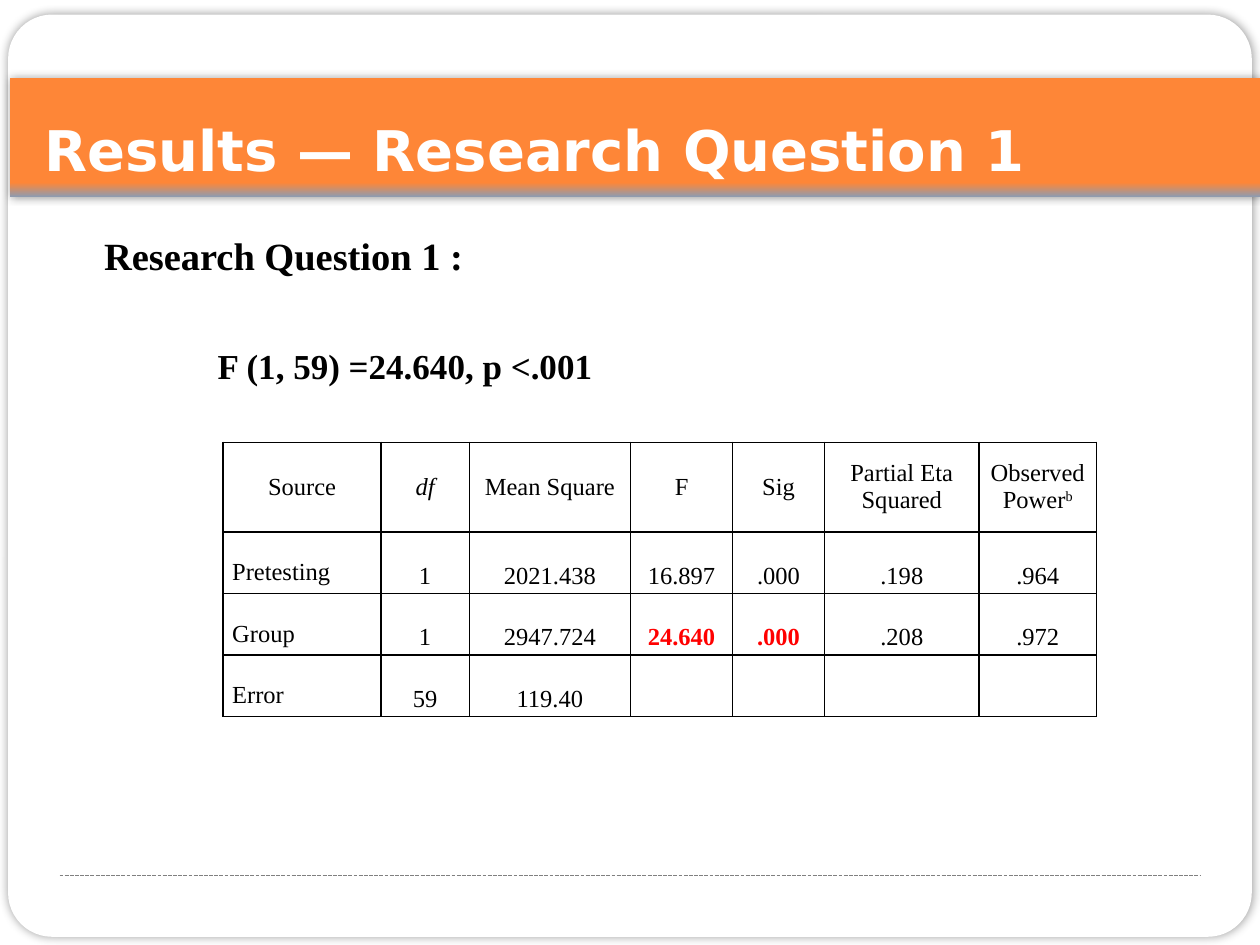
import pptx
import pptx.dml.color
import pptx.enum.dml
import pptx.enum.shapes
import pptx.enum.text
import pptx.oxml
import pptx.oxml.ns
import pptx.util

Cm = pptx.util.Cm
Pt = pptx.util.Pt
RGBColor = pptx.dml.color.RGBColor
SHAPE = pptx.enum.shapes.MSO_SHAPE
ANCHOR = pptx.enum.text.MSO_ANCHOR
ALIGN = pptx.enum.text.PP_ALIGN

WHITE = RGBColor(0xFF, 0xFF, 0xFF)
BLACK = RGBColor(0, 0, 0)
RED = RGBColor(0xFF, 0, 0)
GRAY = RGBColor(0x80, 0x80, 0x80)
ORANGE = RGBColor(0xFE, 0x86, 0x37)
STEEL = RGBColor(0x8E, 0x9B, 0xB0)

SERIF = "Times New Roman"
SANS = "DejaVu Sans"
NAMESPACE = pptx.oxml.ns.nsdecls("a")

COLUMN_WIDTHS = [3.18, 1.78, 3.25, 2.06, 1.85, 3.12, 2.36]
ROW_HEIGHTS = [1.8, 1.24, 1.24, 1.24]
ROWS = [
    ["Source", "df", "Mean Square", "F", "Sig", "Partial Eta Squared", "Observed\nPower"],
    ["Pretesting", "1", "2021.438", "16.897", ".000", ".198", ".964"],
    ["Group", "1", "2947.724", "24.640", ".000", ".208", ".972"],
    ["Error", "59", "119.40", "", "", "", ""],
]
SIGNIFICANT_CELLS = {(2, 3), (2, 4)}


def set_font(paragraph, name, size, color, bold=False):
    font = paragraph.font
    font.name = name
    font.size = Pt(size)
    font.bold = bold
    font.color.rgb = color


def add_glow(shape):
    shape._element.spPr.append(pptx.oxml.parse_xml(
        f'<a:effectLst {NAMESPACE}><a:outerShdw blurRad="{Pt(5)}" dist="0" dir="0">'
        '<a:srgbClr val="000000"><a:alpha val="40000"/></a:srgbClr>'
        '</a:outerShdw></a:effectLst>'))


def add_frame(slide, left, top, width, height):
    card = slide.shapes.add_shape(
        SHAPE.ROUNDED_RECTANGLE, Cm(left), Cm(top), Cm(width), Cm(height))
    card.adjustments[0] = 0.046
    card.fill.solid()
    card.fill.fore_color.rgb = WHITE
    card.line.color.rgb = WHITE
    card.line.width = Pt(2)
    add_glow(card)

    rule_top = Cm(top + 17.32)
    rule = slide.shapes.add_connector(
        pptx.enum.shapes.MSO_CONNECTOR.STRAIGHT,
        Cm(left + 1), rule_top, Cm(left + width - 1), rule_top)
    rule.line.color.rgb = GRAY
    rule.line.width = Pt(0.75)
    rule.line.dash_style = pptx.enum.dml.MSO_LINE.SQUARE_DOT
    rule._element.spPr.append(pptx.oxml.parse_xml(f"<a:effectLst {NAMESPACE}/>"))


def add_title_band(slide, left, top, width, height):
    band = slide.shapes.add_shape(
        SHAPE.RECTANGLE, Cm(left), Cm(top), Cm(width), Cm(height))
    band.fill.gradient()
    band.fill.gradient_angle = 270
    for stop, color, position in zip(
            band.fill.gradient_stops, (ORANGE, STEEL), (0.88, 1)):
        stop.color.rgb = color
        stop.position = position
    band.line.fill.background()
    add_glow(band)

    title = slide.shapes.add_textbox(
        Cm(left + 0.44), Cm(top + 0.62), Cm(21), Cm(1.5))
    title.text_frame.word_wrap = True
    paragraph = title.text_frame.paragraphs[0]
    paragraph.text = "Results — Research Question 1"
    set_font(paragraph, SANS, 32, WHITE, bold=True)


def add_finding(slide, left, top, width, height):
    body = slide.shapes.add_textbox(Cm(left), Cm(top), Cm(width), Cm(height))
    frame = body.text_frame
    frame.word_wrap = True
    frame.margin_top = Cm(1.56)
    question = frame.paragraphs[0]
    result = frame.add_paragraph()
    result.space_before = Pt(38)
    for paragraph, text, size, indent in (
            (question, "Research Question 1 :", 22, 0.58),
            (result, "F (1, 59) =24.640, p <.001", 20, 2.87)):
        paragraph.text = text
        paragraph._p.get_or_add_pPr().set("marL", str(Cm(indent)))
        set_font(paragraph, SERIF, size, BLACK, bold=True)


def style_cell(cell):
    properties = cell._tc.get_or_add_tcPr()
    for side in ("lnL", "lnR", "lnT", "lnB"):
        properties.append(pptx.oxml.parse_xml(
            f'<a:{side} {NAMESPACE} w="{Pt(1)}"><a:solidFill>'
            f'<a:srgbClr val="{BLACK}"/></a:solidFill></a:{side}>'))
    cell.fill.background()
    cell.margin_left = cell.margin_right = Cm(0.18)
    cell.margin_top = cell.margin_bottom = 0


def add_results_table(slide, left, top):
    table = slide.shapes.add_table(
        len(ROWS), len(COLUMN_WIDTHS), Cm(left), Cm(top),
        Cm(sum(COLUMN_WIDTHS)), Cm(sum(ROW_HEIGHTS))).table
    table.first_row = False
    table.horz_banding = False
    for column, width in zip(table.columns, COLUMN_WIDTHS):
        column.width = Cm(width)
    for row, height in zip(table.rows, ROW_HEIGHTS):
        row.height = Cm(height)

    for row_index, texts in enumerate(ROWS):
        for column_index, text in enumerate(texts):
            cell = table.cell(row_index, column_index)
            style_cell(cell)
            row_label = row_index > 0 and column_index == 0
            cell.vertical_anchor = ANCHOR.TOP if row_label else ANCHOR.MIDDLE
            if not text:
                continue
            cell.text = text
            significant = (row_index, column_index) in SIGNIFICANT_CELLS
            for paragraph in cell.text_frame.paragraphs:
                paragraph.alignment = ALIGN.LEFT if row_label else ALIGN.CENTER
                if row_index > 0:
                    paragraph.line_spacing = 2.0
                set_font(paragraph, SERIF, 14, RED if significant else BLACK, significant)

    table.cell(0, 1).text_frame.paragraphs[0].font.italic = True
    footnote = table.cell(0, 6).text_frame.paragraphs[-1].add_run()
    footnote.text = "b"
    footnote._r.get_or_add_rPr().set("baseline", "30000")


def main():
    presentation = pptx.Presentation()
    presentation.slide_width = Cm(25.4)
    presentation.slide_height = Cm(19.05)
    slide = presentation.slides.add_slide(presentation.slide_layouts[6])
    add_frame(slide, 0.2, 0.33, 25, 18.52)
    add_title_band(slide, 0.2, 1.58, 25.2, 2.39)
    add_finding(slide, 1.27, 3.12, 22.02, 14.4)
    add_results_table(slide, 4.5, 8.92)
    presentation.save("out.pptx")


if __name__ == "__main__":
    main()
